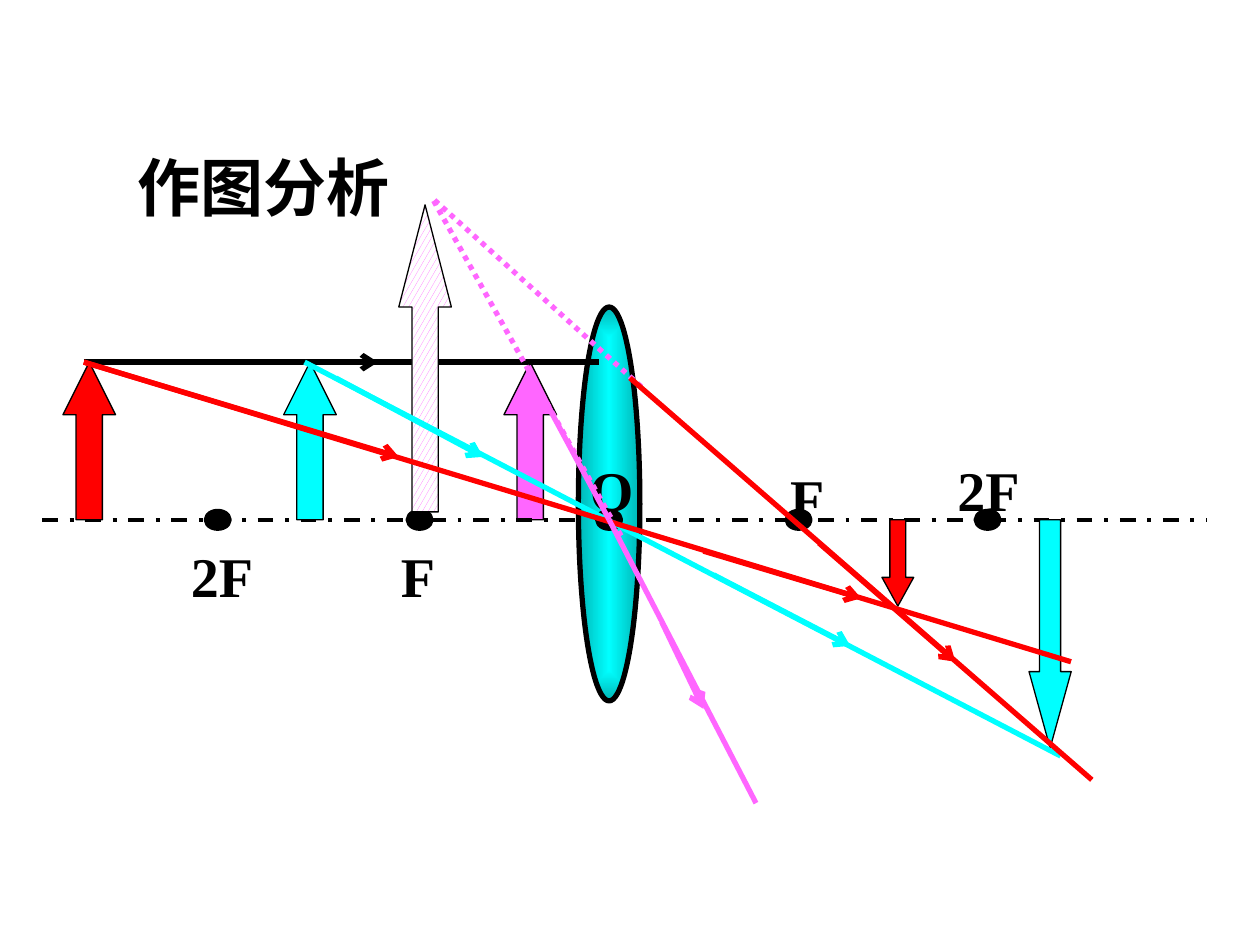
from dataclasses import dataclass

from lxml import etree
from pptx import Presentation
from pptx.dml.color import RGBColor
from pptx.enum.dml import MSO_LINE, MSO_PATTERN
from pptx.enum.shapes import MSO_CONNECTOR, MSO_SHAPE
from pptx.enum.text import MSO_ANCHOR, MSO_AUTO_SIZE, PP_ALIGN
from pptx.oxml.ns import qn
from pptx.util import Cm, Pt

STRAIGHT = MSO_CONNECTOR.STRAIGHT
OVAL = MSO_SHAPE.OVAL
UP, DOWN = MSO_SHAPE.UP_ARROW, MSO_SHAPE.DOWN_ARROW
DASH_DOT, DOTTED = MSO_LINE.DASH_DOT, MSO_LINE.ROUND_DOT
CONFETTI = MSO_PATTERN.LARGE_CONFETTI
TITLE_ONLY = 5


@dataclass(frozen=True)
class Theme:
    ink: RGBColor = RGBColor(0, 0, 0)
    paper: RGBColor = RGBColor(255, 255, 255)
    far: RGBColor = RGBColor(255, 0, 0)
    middle: RGBColor = RGBColor(0, 255, 255)
    near: RGBColor = RGBColor(255, 102, 255)
    lens_edge: RGBColor = RGBColor(0, 182, 182)
    font: str = "Times New Roman"
    title_size: Pt = Pt(36)
    label_size: Pt = Pt(32)
    outline: Pt = Pt(0.75)
    axis: Pt = Pt(2.25)
    ray: Pt = Pt(3)


THEME = Theme()
AXIS_Y = 10.48
OBJECT_TOP = 7.3
LENS_X = 12.28
ARROW_WIDTH = 1.06


def format_text(frame, text, size):
    frame.text = text
    paragraph = frame.paragraphs[0]
    paragraph.alignment = PP_ALIGN.LEFT
    font = paragraph.runs[0].font
    font.name, font.size, font.bold = THEME.font, size, True
    font.color.rgb = THEME.ink


def add_title(slide, text):
    title = slide.shapes.title
    title.left, title.top, title.width, title.height = Cm(2.51), Cm(2.87), Cm(6.15), Cm(1.8)
    title.text_frame.auto_size = MSO_AUTO_SIZE.NONE
    title.text_frame.vertical_anchor = MSO_ANCHOR.TOP
    format_text(title.text_frame, text, THEME.title_size)


def add_label(slide, text, left, top, width, wrap):
    label = slide.shapes.add_textbox(Cm(left), Cm(top), Cm(width), Cm(1.62))
    label.text_frame.word_wrap = wrap
    format_text(label.text_frame, text, THEME.label_size)


def add_outlined(slide, kind, center_x, top, width, height, weight):
    figure = slide.shapes.add_shape(kind, Cm(center_x - width / 2), Cm(top), Cm(width), Cm(height))
    figure.shadow.inherit = False
    figure.line.color.rgb = THEME.ink
    figure.line.width = weight
    return figure


def add_upright(slide, center_x, tip, color, base=AXIS_Y, width=ARROW_WIDTH,
                head=ARROW_WIDTH, hatched=False):
    kind = UP if tip < base else DOWN
    arrow = add_outlined(slide, kind, center_x, min(tip, base), width,
                         abs(tip - base), THEME.outline)
    arrow.adjustments[0] = 0.5
    arrow.adjustments[1] = head / width
    if hatched:
        arrow.fill.patterned()
        arrow.fill.pattern = CONFETTI
        arrow.fill.fore_color.rgb = color
        arrow.fill.back_color.rgb = THEME.paper
    else:
        arrow.fill.solid()
        arrow.fill.fore_color.rgb = color


def add_lens(slide):
    lens = add_outlined(slide, OVAL, LENS_X, 6.19, 1.24, 7.94, THEME.ray)
    lens.fill.gradient()
    for stop, color in zip(lens.fill.gradient_stops, (THEME.middle, THEME.lens_edge)):
        stop.color.rgb = color
    gradient = lens._element.spPr.find(qn("a:gradFill"))
    gradient.remove(gradient.find(qn("a:lin")))
    shading = etree.SubElement(gradient, qn("a:path"), {"path": "shape"})
    center = {side: "50000" for side in "ltrb"}
    etree.SubElement(shading, qn("a:fillToRect"), center)


def add_point(slide, center_x):
    point = add_outlined(slide, OVAL, center_x, AXIS_Y - 0.17, 0.46, 0.34, THEME.ray)
    point.fill.solid()
    point.fill.fore_color.rgb = THEME.ink


def add_line(shapes, start, end, color, weight=THEME.ray, dash=None, arrow=False):
    line = shapes.add_connector(STRAIGHT, *(Cm(value) for value in (*start, *end)))
    line.line.color.rgb = color
    line.line.width = weight
    if dash:
        line.line.dash_style = dash
    properties = line._element.spPr
    if arrow:
        etree.SubElement(properties.find(qn("a:ln")), qn("a:tailEnd"), {"type": "arrow"})
    etree.SubElement(properties, qn("a:effectLst"))


def add_ray(slide, color, paths, directions=(), dash=None):
    ray = slide.shapes.add_group_shape()
    for start, end in paths:
        add_line(ray.shapes, start, end, color, dash=dash)
    for start, end in directions:
        add_line(ray.shapes, start, end, color, arrow=True)


def main():
    deck = Presentation()
    deck.slide_width, deck.slide_height = Cm(25.4), Cm(19.05)
    slide = deck.slides.add_slide(deck.slide_layouts[TITLE_ONLY])
    optical_center = (LENS_X, AXIS_Y)
    far_tip = (1.69, OBJECT_TOP)
    virtual_tip = (8.71, 3.99)

    add_upright(slide, 10.69, OBJECT_TOP, THEME.near)
    add_title(slide, "作图分析")
    add_line(slide.shapes, (0.85, AXIS_Y), (24.34, AXIS_Y), THEME.ink, THEME.axis, DASH_DOT)
    add_lens(slide)
    for center_x in (4.39, 8.46, LENS_X, 16.1, 19.91):
        add_point(slide, center_x)
    for text, left, top, width, wrap in (
        ("F", 15.68, 9.21, 1.47, True),
        ("F", 7.83, 10.8, 1.22, False),
        ("2F", 19.05, 9.05, 1.78, False),
        ("O", 11.64, 9.05, 1.47, True),
        ("2F", 3.6, 10.8, 1.78, False),
    ):
        add_label(slide, text, left, top, width, wrap)

    add_upright(slide, 1.8, OBJECT_TOP, THEME.far)
    add_upright(slide, 18.1, 12.22, THEME.far, width=0.64, head=0.58)
    add_ray(slide, THEME.ink,
            [((1.9, OBJECT_TOP), (12.07, OBJECT_TOP))],
            [(far_tip, (7.62, OBJECT_TOP))])
    add_upright(slide, 6.25, OBJECT_TOP, THEME.middle)
    add_upright(slide, 21.17, 15.08, THEME.middle, width=0.85, head=1.54)
    add_ray(slide, THEME.near,
            [((12.52, 10.8), virtual_tip), ((12.93, 7.8), virtual_tip)], dash=DOTTED)
    add_upright(slide, 8.57, 4.13, THEME.near, base=10.32, head=2.06, hatched=True)
    add_ray(slide, THEME.middle,
            [((6.14, OBJECT_TOP), (21.38, 15.24))],
            [((6.77, 7.62), (9.74, 9.21)), ((14.39, 11.59), (17.14, 13.02))])
    add_ray(slide, THEME.far,
            [(far_tip, (21.59, 13.34))],
            [(far_tip, (8.04, 9.21)), ((14.18, 11.11), (17.36, 12.06))])
    add_ray(slide, THEME.far,
            [((12.7, 7.62), (22.01, 15.72))],
            [((16.51, 10.95), (19.26, 13.34))])
    add_ray(slide, THEME.near,
            [(optical_center, (15.24, 16.19)), ((11, 8.1), optical_center)],
            [((13.34, 12.54), (14.18, 14.29))])
    deck.save("out.pptx")


if __name__ == "__main__":
    main()
